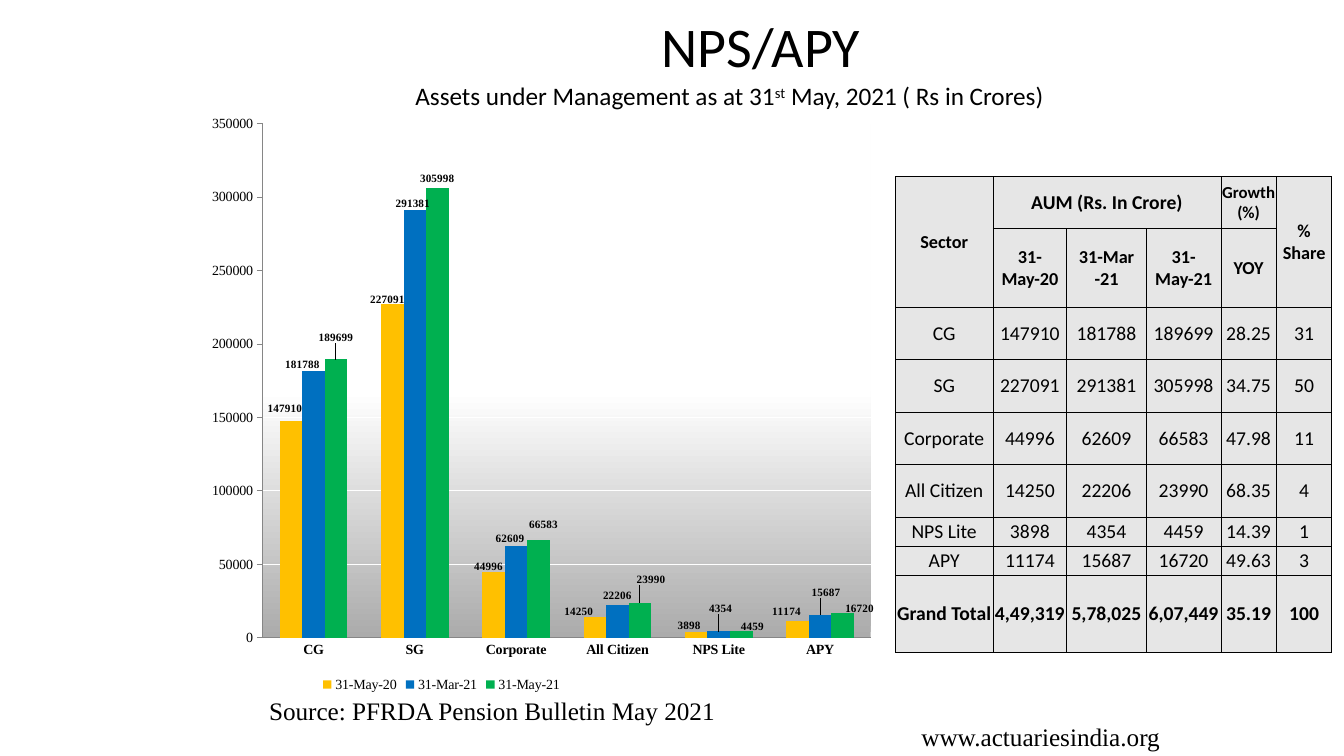
"""Build the NPS/APY assets under management slide with its chart and table."""
from dataclasses import dataclass

import lxml.etree
import pptx
import pptx.chart.data
import pptx.dml.color
import pptx.enum.chart
import pptx.enum.text
import pptx.oxml
import pptx.oxml.ns
import pptx.util

Inches = pptx.util.Inches
Pt = pptx.util.Pt
NAMESPACES = pptx.oxml.ns.nsdecls("a", "c")
CENTER = pptx.enum.text.PP_ALIGN.CENTER
MIDDLE = pptx.enum.text.MSO_ANCHOR.MIDDLE
SANS, SERIF = "Calibri", "Times New Roman"
BLACK, WHITE, CELL_GRAY, AXIS_GRAY = "000000", "FFFFFF", "E6E6E6", "868686"


@dataclass
class Box:
    left: float
    top: float
    width: float
    height: float

    def lengths(self) -> list:
        return [Inches(v) for v in (self.left, self.top, self.width, self.height)]


@dataclass
class Caption:
    box: Box
    runs: list[str]
    font_name: str
    centered: bool = False


@dataclass
class Period:
    name: str
    color: str
    values: list[int]
    label_offsets: dict[int, tuple[float, float]]


CAPTIONS = [
    Caption(Box(1.5, 0.75, 11.47, 0.4),
            ["Assets under Management as at 31", "st", " May, 2021 ( Rs in Crores)"], SANS, True),
    Caption(Box(2.57, 6.85, 6.33, 0.4), ["Source: PFRDA Pension Bulletin May 2021"], SERIF),
    Caption(Box(9.04, 7.11, 3.17, 0.4), ["www.actuariesindia.org"], SERIF),
]
CHART_BOX = Box(0.12, 1.15, 8.55, 5.76)
SECTORS = ["CG", "SG", "Corporate", "All Citizen", "NPS Lite", "APY"]
# Label offsets are inches right and down from the top of the column.
PERIODS = [
    Period("31-May-20", "FFC000", [147910, 227091, 44996, 14250, 3898, 11174],
           {0: (-0.06, -0.02), 1: (-0.05, 0.05), 2: (-0.05, 0.05),
            3: (-0.16, 0.05), 4: (-0.07, 0.03), 5: (-0.11, 0)}),
    Period("31-Mar-21", "0070C0", [181788, 291381, 62609, 22206, 4354, 15687],
           {0: (-0.11, 0.04), 1: (-0.02, 0.04), 2: (-0.06, 0.03),
            4: (0.02, -0.13), 5: (0.06, -0.12)}),
    Period("31-May-21", "00B050", [189699, 305998, 66583, 23990, 4459, 16720],
           {0: (0, -0.12), 2: (0.05, -0.06), 3: (0.11, -0.13),
            4: (0.11, 0.05), 5: (0.17, 0.05)}),
]
TABLE_BOX = Box(8.88, 1.75, 4.33, 4.72)
COLUMN_WIDTHS = [0.97, 0.73, 0.79, 0.74, 0.55, 0.55]
ROW_HEIGHTS = [0.52, 0.78, 0.52, 0.52, 0.52, 0.52, 0.29, 0.29, 0.76]
GROWTH = ["28.25", "34.75", "47.98", "68.35", "14.39", "49.63"]
SHARES = ["31", "50", "11", "4", "1", "3"]
HEADER_ROWS = [
    ["Sector", "AUM (Rs. In Crore)", "", "", "Growth (%)", "% Share"],
    ["", "31-May-20", "31-Mar -21", "31-May-21", "YOY", ""],
]
TOTAL_ROW = ["Grand Total", "4,49,319", "5,78,025", "6,07,449", "35.19", "100"]
HEADER_SIZES = {"AUM (Rs. In Crore)": 14, "Growth (%)": 12}
MERGES = [((0, 0), (1, 0)), ((0, 1), (0, 3)), ((0, 5), (1, 5))]


def rgb(color: str) -> pptx.dml.color.RGBColor:
    return pptx.dml.color.RGBColor.from_string(color)


def format_font(font, name: str, size: float, bold: bool = False) -> None:
    font.name, font.size, font.bold = name, Pt(size), bold
    font.color.rgb = rgb(BLACK)


def add_title(slide) -> None:
    title = slide.shapes.title
    title.left, title.top, title.width, title.height = Box(1.92, 0.15, 11.25, 0.6).lengths()
    title.text_frame.text = "NPS/APY"
    title.text_frame.vertical_anchor = MIDDLE
    paragraph = title.text_frame.paragraphs[0]
    paragraph.alignment = CENTER
    format_font(paragraph.runs[0].font, SANS, 40)


def add_caption(slide, caption: Caption) -> None:
    text_frame = slide.shapes.add_textbox(*caption.box.lengths()).text_frame
    text_frame.word_wrap = True
    paragraph = text_frame.paragraphs[0]
    if caption.centered:
        paragraph.alignment = CENTER
    for text in caption.runs:
        run = paragraph.add_run()
        run.text = text
        format_font(run.font, caption.font_name, 18)
        if text == "st":
            run.font._element.set("baseline", "30000")


def manual_layout(**settings):
    children = "".join(f'<c:{name} val="{value}"/>' for name, value in settings.items())
    return pptx.oxml.parse_xml(
        f"<c:layout {NAMESPACES}><c:manualLayout>{children}</c:manualLayout></c:layout>")


def format_plot_area(chart) -> None:
    plot_area = chart._chartSpace.chart.plotArea
    for layout in plot_area.findall(pptx.oxml.ns.qn("c:layout")):
        plot_area.remove(layout)
    plot_area.insert(0, manual_layout(layoutTarget="inner", xMode="edge", yMode="edge",
                                      x=0.292, y=0.012, w=0.708, h=0.887))
    stops = "".join(f'<a:gs pos="{position}000"><a:srgbClr val="{color}"/></a:gs>'
                    for position, color in [(0, "ABABAB"), (48, WHITE), (100, WHITE)])
    plot_area.append(pptx.oxml.parse_xml(
        f"<c:spPr {NAMESPACES}><a:gradFill><a:gsLst>{stops}</a:gsLst>"
        '<a:lin ang="16200000" scaled="0"/></a:gradFill><a:ln><a:noFill/></a:ln></c:spPr>'))


def format_series(series, period: Period) -> None:
    outside_end = pptx.enum.chart.XL_LABEL_POSITION.OUTSIDE_END
    series.format.fill.solid()
    series.format.fill.fore_color.rgb = rgb(period.color)
    labels = series.data_labels
    labels.show_value = True
    labels.position = outside_end
    format_font(labels.font, SERIF, 8, True)
    for index, (right, down) in period.label_offsets.items():
        label = series.points[index].data_label
        label.position = outside_end
        format_font(label.font, SERIF, 8, True)
        element = labels._element.xpath(f"c:dLbl[c:idx/@val='{index}']")[0]
        element.insert(1, manual_layout(x=round(right / CHART_BOX.width, 4),
                                        y=round(down / CHART_BOX.height, 4)))


def add_assets_chart(slide) -> None:
    data = pptx.chart.data.CategoryChartData()
    data.categories = SECTORS
    for period in PERIODS:
        data.add_series(period.name, period.values)
    chart = slide.shapes.add_chart(pptx.enum.chart.XL_CHART_TYPE.COLUMN_CLUSTERED,
                                   *CHART_BOX.lengths(), data).chart
    format_font(chart.font, SERIF, 10)
    chart.has_title = False
    chart.has_legend = True
    chart.legend.position = pptx.enum.chart.XL_LEGEND_POSITION.BOTTOM
    chart.legend.include_in_layout = False
    format_font(chart.legend.font, SERIF, 10)
    plot = chart.plots[0]
    plot.gap_width, plot.overlap, plot.vary_by_categories = 150, 0, False
    tick_mark = pptx.enum.chart.XL_TICK_MARK
    for axis, mark, bold in [(chart.category_axis, tick_mark.NONE, True),
                             (chart.value_axis, tick_mark.OUTSIDE, False)]:
        axis.major_tick_mark, axis.minor_tick_mark = mark, tick_mark.NONE
        axis.format.line.color.rgb = rgb(AXIS_GRAY)
        format_font(axis.tick_labels.font, SERIF, 10, bold)
    value_axis = chart.value_axis
    value_axis.minimum_scale, value_axis.maximum_scale, value_axis.major_unit = 0, 350000, 50000
    value_axis.major_gridlines.format.line.color.rgb = rgb(WHITE)
    value_axis.major_gridlines.format.line.width = Pt(0.75)
    for series, period in zip(plot.series, PERIODS):
        format_series(series, period)
    format_plot_area(chart)


def format_cell(cell, text: str, size: float, bold: bool) -> None:
    cell.margin_left = cell.margin_right = cell.margin_top = cell.margin_bottom = 0
    cell.vertical_anchor = MIDDLE
    properties = cell._tc.get_or_add_tcPr()
    for side in "LRTB":
        properties.append(pptx.oxml.parse_xml(
            f'<a:ln{side} {NAMESPACES} w="6350"><a:solidFill><a:srgbClr val="{BLACK}"/>'
            f"</a:solidFill></a:ln{side}>"))
    cell.fill.solid()
    cell.fill.fore_color.rgb = rgb(CELL_GRAY)
    cell.text_frame.text = text
    paragraph = cell.text_frame.paragraphs[0]
    paragraph.alignment = CENTER
    for run in paragraph.runs:
        format_font(run.font, SANS, size, bold)


def add_assets_table(slide) -> None:
    sector_rows = [list(map(str, row)) for row in
                   zip(SECTORS, *(period.values for period in PERIODS), GROWTH, SHARES)]
    rows = HEADER_ROWS + sector_rows + [TOTAL_ROW]
    table = slide.shapes.add_table(len(rows), len(COLUMN_WIDTHS), *TABLE_BOX.lengths()).table
    for column, width in zip(table.columns, COLUMN_WIDTHS):
        column.width = Inches(width)
    for row_index, (texts, height) in enumerate(zip(rows, ROW_HEIGHTS)):
        table.rows[row_index].height = Inches(height)
        is_header = row_index < len(HEADER_ROWS)
        for column_index, text in enumerate(texts):
            size = HEADER_SIZES.get(text, 13) if is_header else 14
            format_cell(table.cell(row_index, column_index), text, size,
                        is_header or texts is TOTAL_ROW)
    for first, last in MERGES:
        table.cell(*first).merge(table.cell(*last))


def main() -> None:
    presentation = pptx.Presentation()
    presentation.slide_width, presentation.slide_height = Inches(13.33), Inches(7.5)
    slide = presentation.slides.add_slide(presentation.slide_layouts[5])
    add_title(slide)
    add_assets_table(slide)
    add_assets_chart(slide)
    for caption in CAPTIONS:
        add_caption(slide, caption)
    presentation.save("out.pptx")


if __name__ == "__main__":
    main()
